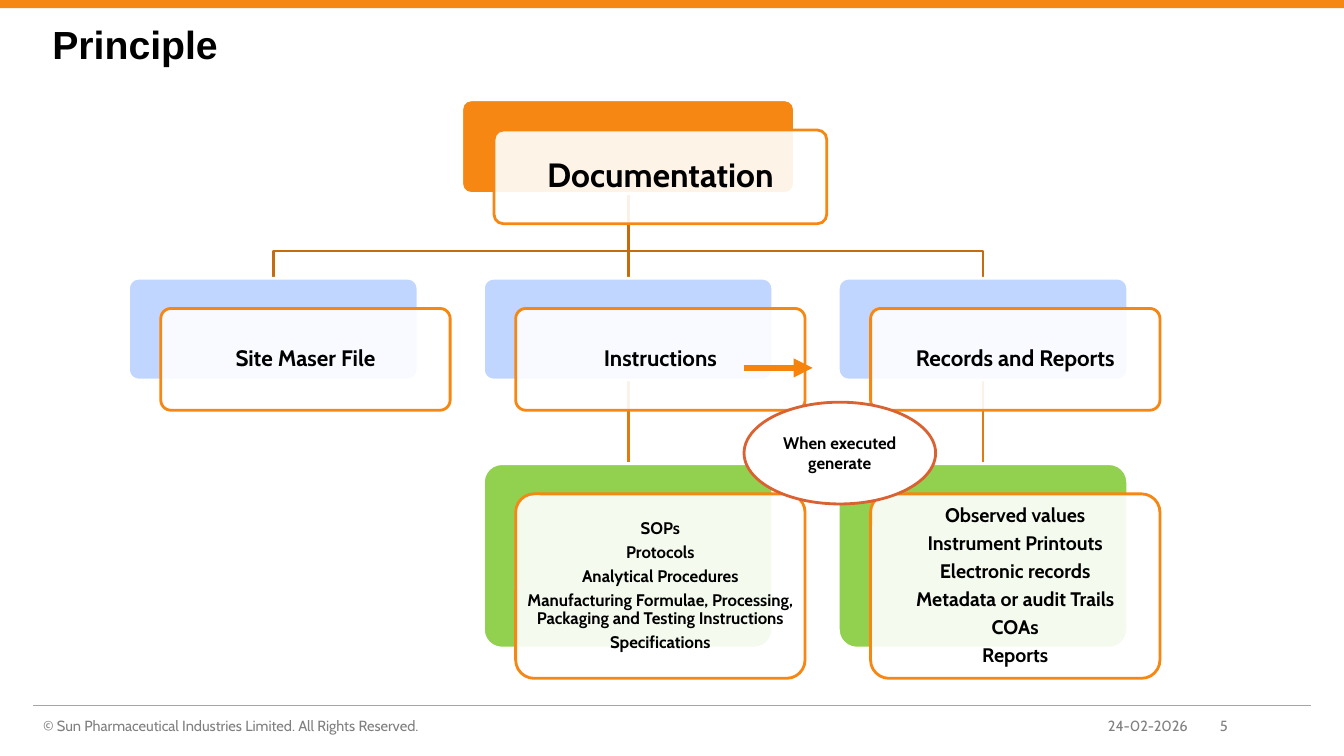
from lxml import etree
from pptx import Presentation, util as u
from pptx.dml.color import RGBColor
from pptx.enum import shapes as kinds, text as modes
from pptx.oxml import ns

WIDTH, HEIGHT = 13.33, 7.5
ORANGE, BLUE, GREEN, WHITE, BLACK, GREY = "F68712", "C1D6FF", "92D050", "FFFFFF", "000000", "808080"
ROOT_LINE, LEAF_LINE = "C56C0E", "DF7B10"
LEFT, CENTER, RIGHT = modes.PP_ALIGN.LEFT, modes.PP_ALIGN.CENTER, modes.PP_ALIGN.RIGHT
SHAPE = kinds.MSO_SHAPE

TITLE = "Principle"
NOTE = "When executed generate"
FOOTERS = [
    ("© Sun Pharmaceutical Industries Limited. All Rights Reserved.", 0.33, 8, LEFT),
    ("5", 12, 1, LEFT),
    ("24-02-2026", 8.44, 3.44, RIGHT),
]
CARDS = {
    "root": (1, 0, ORANGE, 24, 0.1, ["Documentation"]),
    "site": (0, 1, BLUE, 16, 0.07, ["Site Maser File"]),
    "instructions": (1, 1, BLUE, 16, 0.07, ["Instructions"]),
    "procedures": (1, 2, GREEN, 12, 0.05, [
        "SOPs", "Protocols", "Analytical Procedures",
        "Manufacturing Formulae, Processing, Packaging and Testing Instructions",
        "Specifications"]),
    "records": (2, 1, BLUE, 16, 0.07, ["Records and Reports"]),
    "evidence": (2, 2, GREEN, 14, 0.06, [
        "Observed values", "Instrument Printouts", "Electronic records",
        "Metadata or audit Trails", "COAs", "Reports"]),
}
STRAIGHT = [("records", "evidence", LEAF_LINE), ("instructions", "procedures", LEAF_LINE),
            ("root", "instructions", ROOT_LINE)]
BENT = [("root", "records"), ("root", "site")]

MIDDLE_COLUMN, COLUMN_STEP = 6.23, 3.52
ROWS = [(0.99, 3.3, 0.93), (2.76, 2.87, 1.01), (4.6, 2.87, 1.83)]
SHIFT_X, SHIFT_Y = 0.32, 0.3
BEND_Y = 2.49

deck = Presentation()
deck.slide_width, deck.slide_height = u.Inches(WIDTH), u.Inches(HEIGHT)
slide = deck.slides.add_slide(deck.slide_layouts[6])


def color(value):
    return RGBColor.from_string(value)


def inches(*lengths):
    return [u.Inches(length) for length in lengths]


def assign(target, values):
    for key, value in values.items():
        setattr(target, key, value)


def stroke(item, shade, width):
    item.line.color.rgb = color(shade)
    item.line.width = u.Pt(width)


def write(frame, lines, size, font="Cabin", ink=BLACK, bold=True, align=CENTER,
          anchor=modes.MSO_ANCHOR.MIDDLE, insets=(0.1, 0.05, 0.1, 0.05), spacing=None):
    left, top, right, bottom = inches(*insets)
    assign(frame, {"word_wrap": True, "vertical_anchor": anchor, "margin_left": left,
                   "margin_top": top, "margin_right": right, "margin_bottom": bottom})
    for index, line in enumerate(lines):
        paragraph = frame.add_paragraph() if index else frame.paragraphs[0]
        paragraph.alignment = align
        if spacing:
            assign(paragraph, {"line_spacing": 0.9, "space_after": u.Pt(size * spacing)})
        run = paragraph.add_run()
        run.text = line
        assign(run.font, {"name": font, "size": u.Pt(size), "bold": bold})
        run.font.color.rgb = color(ink)


def block(kind, box, fill, edge=None):
    item = slide.shapes.add_shape(kind, *inches(*box))
    item.shadow.inherit = False
    item.fill.solid()
    item.fill.fore_color.rgb = color(fill)
    if edge:
        stroke(item, edge, 2)
    else:
        item.line.fill.background()
    return item


def straight(start, end, shade, width):
    item = slide.shapes.add_connector(kinds.MSO_CONNECTOR.STRAIGHT, *inches(*start, *end))
    stroke(item, shade, width)
    etree.SubElement(item._element.spPr, ns.qn("a:effectLst"))
    return item


def place(name):
    column, row = CARDS[name][:2]
    top, width, height = ROWS[row]
    center = MIDDLE_COLUMN + (column - 1) * COLUMN_STEP
    return center - width / 2, top, width, height


def top_middle(name):
    left, top, width, _ = place(name)
    return left + width / 2, top


def bottom_middle(name):
    left, top, width, height = place(name)
    return left + width / 2, top + height


def card(name):
    _, _, fill, size, inset, lines = CARDS[name]
    left, top, width, height = place(name)
    back = block(SHAPE.ROUNDED_RECTANGLE, (left, top, width, height), fill, WHITE)
    front = block(SHAPE.ROUNDED_RECTANGLE, (left + SHIFT_X, top + SHIFT_Y, width, height), WHITE, ORANGE)
    for panel in (back, front):
        panel.adjustments[0] = 0.1
    tint = front._element.spPr.find(ns.qn("a:solidFill"))[0]
    etree.SubElement(tint, ns.qn("a:alpha"), val="90000")
    write(front.text_frame, lines, size, insets=[inset] * 4, spacing=0.35)
    return back


block(SHAPE.RECTANGLE, (0, 0, WIDTH, 0.08), ORANGE)
straight((0.33, 7), (13, 7), "A6A6A6", 0.25)
for words, left, width, align in FOOTERS:
    footer = slide.shapes.add_textbox(*inches(left, 7.08, width, 0.23))
    write(footer.text_frame, [words], 10.5, ink=GREY, bold=False, align=align, insets=(0.1, 0, 0.1, 0))

stems = [(straight(bottom_middle(parent), top_middle(child), shade, 2), parent, child)
         for parent, child, shade in STRAIGHT]
for parent, child in BENT:
    start, end = bottom_middle(parent), top_middle(child)
    route = [inches(*point) for point in ((start[0], BEND_Y), (end[0], BEND_Y), end)]
    builder = slide.shapes.build_freeform(*inches(*start))
    builder.add_line_segments(route, close=False)
    branch = builder.convert_to_shape()
    branch.shadow.inherit = False
    branch.fill.background()
    stroke(branch, ROOT_LINE, 2)

backs = {name: card(name) for name in CARDS}
for stem, parent, child in stems:
    stem.begin_connect(backs[parent], 2)
    stem.end_connect(backs[child], 0)

arrow = straight((7.38, 3.65), (8.06, 3.65), "F6840C", 4.5)
etree.SubElement(arrow.line._get_or_add_ln(), ns.qn("a:tailEnd"), type="triangle")
note = block(SHAPE.OVAL, (7.38, 3.99, 1.9, 1.01), WHITE, "DA6232")
write(note.text_frame, [NOTE], 12)

title = slide.shapes.add_textbox(*inches(0.33, 0.11, 12.33, 0.69))
write(title.text_frame, [TITLE], 28, font="Arial", align=LEFT,
      anchor=modes.MSO_ANCHOR.TOP, insets=(0.19, 0.09, 0.1, 0.05))

deck.save("out.pptx")
